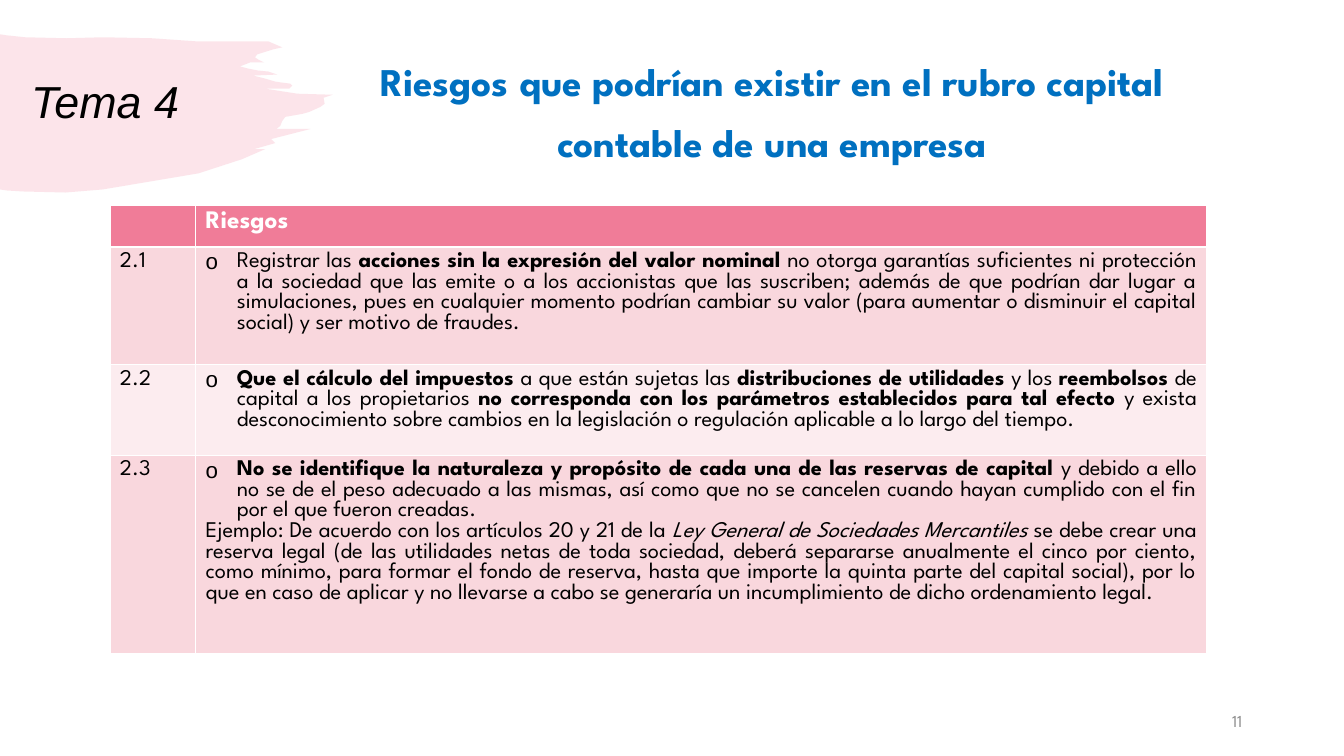
"""Build the slide on risks in the equity section of a company."""
from lxml.etree import SubElement
from pptx import Presentation
from pptx.dml.color import RGBColor
from pptx.enum.text import MSO_ANCHOR as Anchor, PP_ALIGN as Align
from pptx.oxml.ns import qn
from pptx.util import Inches, Pt

PINK = RGBColor(0xF0, 0x7C, 0x98)
ROSE = RGBColor(0xF9, 0xD7, 0xDD)
BLUSH = RGBColor(0xFC, 0xEC, 0xEF)
WHITE = RGBColor(0xFF, 0xFF, 0xFF)
BLACK = RGBColor(0, 0, 0)
BLUE = RGBColor(0x00, 0x70, 0xC0)
GRAY = RGBColor(0x8C, 0x8C, 0x8C)
SPARTAN = "League Spartan"

TOPIC = {"name": "Arial", "size": Pt(32), "italic": True, "bold": False}
HEADING = {"name": SPARTAN, "size": Pt(28), "bold": True}
NUMBER = {"name": SPARTAN, "size": Pt(12), "bold": False}
HEADER = {"name": SPARTAN, "size": Pt(18), "bold": True}
BODY = {"name": SPARTAN, "size": Pt(16), "bold": False}
BOLD = BODY | {"bold": True}
ITALIC = BODY | {"italic": True}

BRUSH = [
    (0, 0.34), (0.06, 0.35), (0.25, 0.37), (0.66, 0.38), (1.02, 0.37), (1.51, 0.38),
    (1.94, 0.41), (2.48, 0.41), (2.66, 0.41), (2.8, 0.47), (2.71, 0.49), (2.55, 0.54),
    (2.53, 0.57), (2.56, 0.59), (2.62, 0.62), (2.48, 0.62), (2.38, 0.66), (2.46, 0.68),
    (2.56, 0.7), (2.66, 0.71), (2.75, 0.74), (2.51, 0.75), (2.63, 0.78), (2.73, 0.81),
    (2.8, 0.82), (2.88, 0.83), (2.9, 0.85), (2.87, 0.88), (2.84, 0.88), (2.63, 0.88),
    (2.95, 0.93), (3.3, 0.94), (3.21, 0.97), (3.22, 1.03), (3.18, 1.06), (3.07, 1.11),
    (3, 1.13), (2.83, 1.16), (2.8, 1.2), (2.78, 1.25), (2.74, 1.28), (3.08, 1.28),
    (2.69, 1.38), (2.73, 1.42), (2.52, 1.48), (2.63, 1.48), (2.4, 1.58), (1.97, 1.72),
    (1.02, 1.88), (0.65, 1.91), (0.23, 1.9), (0.07, 1.89), (0, 1.88),
]

RISKS = [
    ("2.1", 1.16, ROSE, [[
        ("Registrar las ", BODY),
        ("acciones sin la expresión del valor nominal", BOLD),
        (" no otorga garantías suficientes ni protección a la sociedad que las emite o a los "
         "accionistas que las suscriben; además de que podrían dar lugar a simulaciones, pues en "
         "cualquier momento podrían cambiar su valor (para aumentar o disminuir el capital "
         "social) y ser motivo de fraudes. ", BODY),
    ]]),
    ("2.2", 0.9, BLUSH, [[
        ("Que el cálculo del impuestos ", BOLD),
        ("a que están sujetas las ", BODY),
        ("distribuciones de utilidades ", BOLD),
        ("y los ", BODY),
        ("reembolsos ", BOLD),
        ("de capital a los propietarios ", BODY),
        ("no corresponda con los parámetros establecidos para tal efecto ", BOLD),
        ("y exista desconocimiento sobre cambios en la legislación o regulación aplicable a lo "
         "largo del tiempo. ", BODY),
    ]]),
    ("2.3", 1.97, ROSE, [[
        ("No se identifique la naturaleza y propósito de cada una de las reservas de capital ",
         BOLD),
        ("y debido a ello no se de el peso adecuado a las mismas, así como que no se cancelen "
         "cuando hayan cumplido con el fin por el que fueron creadas.", BODY),
    ], [
        ("Ejemplo: De acuerdo con los artículos 20 y 21 de la ", BODY),
        ("Ley General de Sociedades Mercantiles", ITALIC),
        (" se debe crear una reserva legal (de las utilidades netas de toda sociedad, deberá "
         "separarse anualmente el cinco por ciento, como mínimo, para formar el fondo de "
         "reserva, hasta que importe la quinta parte del capital social), por lo que en caso de "
         "aplicar y no llevarse a cabo se generaría un incumplimiento de dicho ordenamiento "
         "legal. ", BODY),
    ]]),
]


def write(paragraph, text, formats, color, align):
    paragraph.alignment = align
    run = paragraph.add_run()
    run.text = text
    for key, value in formats.items():
        setattr(run.font, key, value)
    run.font.color.rgb = color


def fill(part, color):
    part.fill.solid()
    part.fill.fore_color.rgb = color


deck = Presentation()
deck.slide_width, deck.slide_height = Inches(13.33), Inches(7.5)
slide = deck.slides.add_slide(deck.slide_layouts[5])
shapes = slide.shapes

outline = [(Inches(x), Inches(y)) for x, y in BRUSH]
builder = shapes.build_freeform(*outline[0])
builder.add_line_segments(outline[1:], close=True)
brush = builder.convert_to_shape()
brush.shadow.inherit = False
brush.line.fill.background()
fill(brush, PINK)
tint = brush.fill._xPr.find(qn("a:solidFill"))[0]
SubElement(tint, qn("a:alpha"), val="20000")

topic = shapes.title
topic.left, topic.top, topic.width, topic.height = map(Inches, (0.21, 0.57, 2.53, 0.92))
topic.text_frame.vertical_anchor = Anchor.MIDDLE
topic_line = topic.text_frame.paragraphs[0]
topic_line.line_spacing = 0.9
write(topic_line, "Tema 4", TOPIC, BLACK, Align.LEFT)
brush._element.addnext(topic._element)

page = shapes.add_textbox(Inches(9.42), Inches(6.95), Inches(3), Inches(0.4)).text_frame
page.word_wrap = True
page.vertical_anchor = Anchor.MIDDLE
write(page.paragraphs[0], "11", NUMBER, GRAY, Align.RIGHT)

heading = shapes.add_textbox(Inches(3.25), Inches(0.38), Inches(8.81), Inches(1.04)).text_frame
heading.word_wrap = True
heading.paragraphs[0].line_spacing = 1.3
write(heading.paragraphs[0],
      "Riesgos que podrían existir en el rubro capital contable de una empresa",
      HEADING, BLUE, Align.CENTER)

table = shapes.add_table(len(RISKS) + 1, 2, Inches(1.09), Inches(2.04),
                         Inches(10.88), Inches(4.44)).table
table.columns[0].width, table.columns[1].width = Inches(0.85), Inches(10.03)
table.rows[0].height = Inches(0.41)
for header_cell in table.rows[0].cells:
    fill(header_cell, PINK)
write(table.cell(0, 1).text_frame.paragraphs[0], "Riesgos", HEADER, WHITE, Align.LEFT)

for row, (number, height, color, paragraphs) in enumerate(RISKS, start=1):
    table.rows[row].height = Inches(height)
    number_cell, risk_cell = table.rows[row].cells
    fill(number_cell, color)
    fill(risk_cell, color)
    write(number_cell.text_frame.paragraphs[0], number, BODY, BLACK, Align.JUSTIFY)
    risk_text = risk_cell.text_frame
    for index, runs in enumerate(paragraphs):
        paragraph = risk_text.add_paragraph() if index else risk_text.paragraphs[0]
        for text, formats in runs:
            write(paragraph, text, formats, BLACK, Align.JUSTIFY)
    bulleted = risk_text.paragraphs[0]._p.get_or_add_pPr()
    bulleted.set("marL", str(Inches(0.31)))
    bulleted.set("indent", str(-Inches(0.31)))
    SubElement(bulleted, qn("a:buFont"), typeface="Arial")
    SubElement(bulleted, qn("a:buChar"), char="o")

deck.save("out.pptx")
